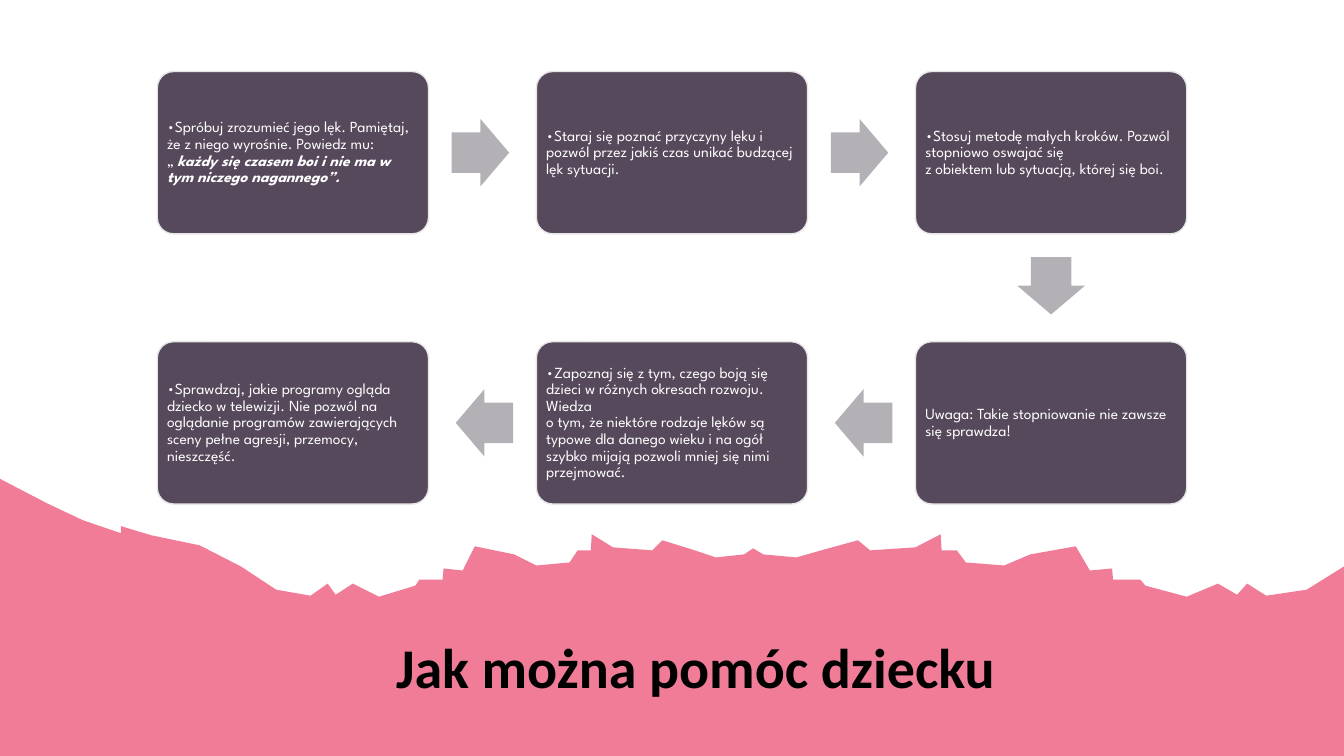
from copy import deepcopy
from math import atan2, degrees

from pptx import Presentation
from pptx.dml.color import RGBColor as Color
from pptx.enum.shapes import MSO_SHAPE as Preset
from pptx.enum.text import MSO_ANCHOR as Anchor, PP_ALIGN as Align
from pptx.util import Inches, Pt

THEME = {
    "pink": Color.from_string("F07C98"),
    "card": Color.from_string("57495C"),
    "border": Color.from_string("E7E6E6"),
    "arrow": Color.from_string("B4B1B6"),
    "white": Color.from_string("FFFFFF"),
    "black": Color.from_string("000000"),
    "card_font": "League Spartan",
    "title_font": "Calibri",
    "card_size": Pt(11),
    "title_size": Pt(40),
}

# Card grid, in inches
LEFT, TOP = 1.56, 0.71
CARD_WIDTH, CARD_HEIGHT = 2.69, 1.61
COLUMN_STEP, ROW_STEP = 3.76, 2.68
ARROW_LENGTH, ARROW_WIDTH = 0.57, 0.67
ARROW_SETBACK = 0.02

# Column, row and text spans (text, emphasised) in reading order
STEPS = [
    (0, 0, [("•Spróbuj zrozumieć jego lęk. Pamiętaj, że z niego wyrośnie. "
             "Powiedz mu: „ ", False),
            ("każdy się czasem boi i nie ma w tym niczego nagannego”.", True)]),
    (1, 0, [("•Staraj się poznać przyczyny lęku i pozwól przez jakiś czas "
             "unikać budzącej lęk sytuacji.", False)]),
    (2, 0, [("•Stosuj metodę małych kroków. Pozwól stopniowo oswajać się \n"
             "z obiektem lub sytuacją, której się boi.", False)]),
    (2, 1, [("Uwaga: Takie stopniowanie nie zawsze się sprawdza!", False)]),
    (1, 1, [("•Zapoznaj się z tym, czego boją się dzieci w różnych okresach "
             "rozwoju. Wiedza \no tym, że niektóre rodzaje lęków są typowe dla "
             "danego wieku i na ogół szybko mijają pozwoli mniej się nimi "
             "przejmować.", False)]),
    (0, 1, [("•Sprawdzaj, jakie programy ogląda dziecko w telewizji. Nie pozwól "
             "na oglądanie programów zawierających sceny pełne agresji, "
             "przemocy, nieszczęść.", False)]),
]

# Torn edge in hundredths of an inch: a left slope, then a half that is
# mirrored about the middle and stretched to reach the right side
SLOPE = [(0, 475), (46, 499), (82, 516), (120, 529), (120, 522), (150, 531), (198, 541)]
HALF = [
    (239, 562), (274, 585), (308, 591), (325, 579), (333, 590), (350, 579),
    (376, 592), (412, 581), (416, 575), (439, 575), (440, 564), (459, 566),
    (471, 542), (510, 550), (532, 561), (565, 558), (573, 546), (586, 546),
    (587, 530), (608, 543), (647, 546), (657, 536), (686, 545), (710, 553),
    (738, 550), (747, 544),
]
MIDDLE, STRETCH = 747, 1.16


def paint(shape, fill, line=None):
    shape.shadow.inherit = False
    shape.fill.solid()
    shape.fill.fore_color.rgb = fill
    if line is None:
        shape.line.fill.background()
    else:
        shape.line.color.rgb = line
        shape.line.width = Pt(1)


def write(para, text, *, font, size, color, bold=False, italic=False):
    """Add formatted text to a paragraph; each newline becomes a line break."""
    for index, part in enumerate(text.split("\n")):
        if index:
            para.add_line_break()
            para._p[-1].append(deepcopy(span._r.rPr))  # the break keeps the text size
        span = para.add_run()
        span.text = part
        span.font.name, span.font.size = font, size
        span.font.bold, span.font.italic = bold, italic
        span.font.color.rgb = color


deck = Presentation()
deck.slide_width, deck.slide_height = Inches(13.33), Inches(7.5)
page = deck.slides.add_slide(deck.slide_layouts[6])
shapes = page.shapes

mirrored = [(min(1333, MIDDLE + STRETCH * (MIDDLE - x)), y) for x, y in HALF[-2::-1]]
edge = SLOPE + HALF + mirrored
outline = shapes.build_freeform(*edge[0], scale=Inches(0.01))
outline.add_line_segments(edge[1:] + [(1333, 750), (0, 750)], close=True)
paint(outline.convert_to_shape(), THEME["pink"])

previous = None
for column, row, spans in STEPS:
    left, top = LEFT + column * COLUMN_STEP, TOP + row * ROW_STEP
    card = shapes.add_shape(Preset.ROUNDED_RECTANGLE, Inches(left), Inches(top),
                            Inches(CARD_WIDTH), Inches(CARD_HEIGHT))
    card.adjustments[0] = 0.1
    paint(card, THEME["card"], THEME["border"])
    frame = card.text_frame
    frame.word_wrap = True
    frame.vertical_anchor = Anchor.MIDDLE
    frame.margin_left = frame.margin_right = Inches(0.05)
    frame.margin_top = frame.margin_bottom = Inches(0.05)
    para = frame.paragraphs[0]
    para.alignment = Align.LEFT
    para.line_spacing = 0.9
    for text, emphasised in spans:
        write(para, text, font=THEME["card_font"], size=THEME["card_size"],
              color=THEME["white"], bold=emphasised, italic=emphasised)

    if previous:
        across, down = column - previous[0], row - previous[1]
        center_x = left + CARD_WIDTH / 2 - across * (COLUMN_STEP / 2 + ARROW_SETBACK)
        center_y = top + CARD_HEIGHT / 2 - down * (ROW_STEP / 2 + ARROW_SETBACK)
        arrow = shapes.add_shape(
            Preset.RIGHT_ARROW,
            Inches(center_x - ARROW_LENGTH / 2), Inches(center_y - ARROW_WIDTH / 2),
            Inches(ARROW_LENGTH), Inches(ARROW_WIDTH))
        arrow.adjustments[0], arrow.adjustments[1] = 0.6, 0.5
        arrow.rotation = degrees(atan2(down, across))
        paint(arrow, THEME["arrow"])
    previous = column, row

title = shapes.add_textbox(Inches(3.83), Inches(6.23), Inches(6.93), Inches(0.77))
title.text_frame.word_wrap = True
write(title.text_frame.paragraphs[0], "Jak można pomóc dziecku",
      font=THEME["title_font"], size=THEME["title_size"],
      color=THEME["black"], bold=True)

deck.save("out.pptx")
